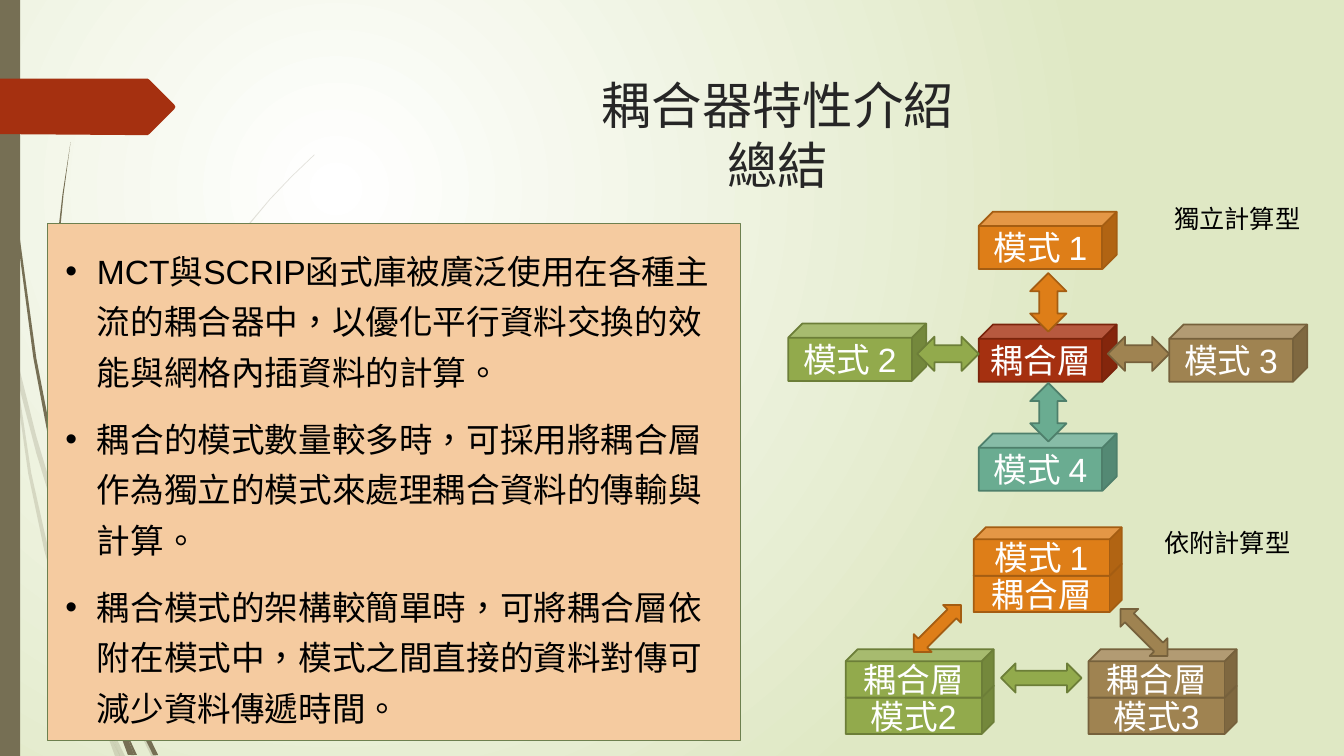
from dataclasses import dataclass

from lxml import etree
from pptx import Presentation
from pptx.dml.color import RGBColor
from pptx.enum import lang, shapes, text
from pptx.oxml.ns import qn
from pptx.util import Pt

WHITE, BLACK, TAUPE, RED = "FFFFFF", "000000", "766F54", "A53010"
OUTLINES = {"DE7E18": "A45D12", "92AA4C": "6C7E38", "9F8351": "76613C",
            "6AAC91": "4E7F6B", RED: "7A240C"}
ORANGE, GREEN, BROWN, TEAL = "DE7E18", "92AA4C", "9F8351", "6AAC91"
COUPLER = "耦合層"


@dataclass
class Cube:
    label: str
    left: float
    top: float
    color: str


@dataclass
class Arrow:
    left: float
    top: float
    width: float
    height: float
    color: str
    rotation: float = 0


@dataclass
class Stack:
    left: float
    top: float
    color: str
    labels: tuple[str, str]


PALE_WISPS = [
    [(7.9, 252), (6.5, 231.8), (0, 203), (0, 215.3), (7.2, 247.7)],
    [(41.8, 375.8), (60.5, 431.3), (61.2, 421.9), (44.6, 374.4), (26, 311.9), (10.1, 248.4),
     (12.2, 270.7), (25.9, 323.6)],
    [(66.2, 437), (63.4, 429.1), (63.4, 439.2), (88.6, 499.7), (108, 540), (111.6, 540),
     (91.4, 498.2)],
    [(85.7, 540), (89.3, 540), (75.6, 511.9)],
    [(67, 491.8), (50.4, 445.7), (34.5, 392.2), (22.3, 337.7), (12.2, 270.7), (7.9, 252),
     (20.2, 338.4), (31.6, 393), (46.8, 447.1), (66.2, 499), (72.7, 514.1), (71.3, 509)],
    [(63.4, 420.5), (68.6, 375.8), (79.2, 332.6), (95.3, 290.9), (115.2, 251.3),
     (138.2, 213.1), (164.9, 176.4), (193, 142.6), (208.8, 126), (224.6, 110.9),
     (224.6, 110.2), (208.1, 126), (193, 141.8), (164.2, 175.7), (137.5, 212),
     (113.8, 250.6), (93.2, 290.2), (77, 331.9), (65.9, 375.7), (61.2, 420.5),
     (61.2, 421.9), (63.4, 429.1)],
    [(72.7, 514.1), (82.1, 540), (85.7, 540)],
    [(69.1, 498.2), (67, 491.8), (71.3, 509), (72.7, 514.1), (85.7, 540), (75.6, 511.9)],
]
DARK_WISPS = [
    [(5, 79.2), (12.2, 167.8), (23.8, 255.6), (40.3, 343.4), (41, 346.3), (39.6, 329),
     (39.6, 326.2), (25.9, 255.6), (13.7, 167), (5.8, 78.5), (3.6, 34.6), (2.9, 0),
     (2.2, 0), (2.9, 34.6)],
    [(81.4, 467.3), (79.2, 461.5), (79.9, 472.3), (95, 509.8), (109.4, 539.3),
     (113, 539.3), (97.9, 508.3)],
    [(43.2, 339.8), (41.8, 326.2), (38.9, 251.3), (41.8, 176.4), (45.4, 139), (50.4, 101.5),
     (44.6, 139), (40.3, 176.4), (37.4, 251.3), (39.6, 323.3)],
    [(95.8, 539.3), (97.9, 539.3), (87.8, 517.7)],
    [(84.2, 519.8), (91.4, 539.3), (94.3, 539.3)],
    [(83.5, 508.3), (79.2, 497.5), (83.5, 516.2), (84.2, 519.8), (93.6, 539.3),
     (95.8, 539.3), (87.8, 517.7)],
]
TAG = [(0, 56.2), (105.5, 56.2), (106.6, 56.9), (124.6, 74.9), (125.3, 76.3),
       (124.6, 77.8), (106.6, 95.8), (105.5, 96.5), (97.9, 96.5), (0, 95.8)]

INDEPENDENT_CUBES = [
    Cube("模式 2", 563, 231.1, GREEN), Cube("模式 4", 699.1, 309.6, TEAL),
    Cube(COUPLER, 699.1, 231.8, RED), Cube("模式 1", 699.1, 151.2, ORANGE),
    Cube("模式 3", 835.2, 231.8, BROWN),
]
INDEPENDENT_ARROWS = [
    Arrow(727.9, 281.5, 41.8, 25.9, TEAL, 90), Arrow(655.2, 240.5, 43.9, 24.5, GREEN),
    Arrow(791.3, 240.5, 43.9, 24.5, BROWN), Arrow(727.9, 203, 41.8, 25.9, ORANGE, 90),
]
ATTACHED_STACKS = [
    Stack(695.5, 376.6, ORANGE, ("模式 1", COUPLER)),
    Stack(604.1, 463.7, GREEN, (COUPLER, "模式2")),
    Stack(777.6, 463.7, BROWN, (COUPLER, "模式3")),
]
ATTACHED_ARROWS = [
    Arrow(645.8, 439.9, 47.5, 18, ORANGE, 135), Arrow(715, 473.8, 57.6, 20.9, GREEN),
    Arrow(793.4, 442.8, 47.5, 18, BROWN, 45),
]
SUMMARY = [
    "MCT與SCRIP函式庫被廣泛使用在各種主流的耦合器中，以優化平行資料交換的效能與網格內插資料的計算。",
    "耦合的模式數量較多時，可採用將耦合層作為獨立的模式來處理耦合資料的傳輸與計算。",
    "耦合模式的架構較簡單時，可將耦合層依附在模式中，模式之間直接的資料對傳可減少資料傳遞時間。",
]


def rgb(color: str) -> RGBColor:
    return RGBColor.from_string(color)


def write(paragraph, words: str, *, size: float = 24, color: str = BLACK,
          font: str = "Arial", align=None) -> None:
    run = paragraph.add_run()
    run.text = words
    run.font.size, run.font.name = Pt(size), font
    run.font.color.rgb = rgb(color)
    run.font.language_id = lang.MSO_LANGUAGE_ID.TRADITIONAL_CHINESE
    if align is not None:
        paragraph.alignment = align


def paint(shape, color: str, outline: str | None = None, weight: float = 1.25) -> None:
    shape.shadow.inherit = False
    shape.fill.solid()
    shape.fill.fore_color.rgb = rgb(color)
    if outline:
        shape.line.color.rgb = rgb(outline)
        shape.line.width = Pt(weight)
    else:
        shape.line.fill.background()


def draw_preset(slide, kind, left: float, top: float, width: float, height: float,
                color: str, outline: str | None = None, weight: float = 1.25):
    preset = slide.shapes.add_shape(kind, Pt(left), Pt(top), Pt(width), Pt(height))
    paint(preset, color, outline, weight)
    return preset


def draw_outline(slide, points: list, color: str, opacity: int = 100) -> None:
    corners = [(Pt(x), Pt(y)) for x, y in points]
    builder = slide.shapes.build_freeform(*corners[0])
    builder.add_line_segments(corners[1:], close=True)
    outline = builder.convert_to_shape()
    paint(outline, color)
    if opacity < 100:
        tint = outline.element.spPr.find(".//" + qn("a:srgbClr"))
        etree.SubElement(tint, qn("a:alpha"), val=str(opacity * 1000))


def draw_cube(slide, cube: Cube, width: float = 98.6, height: float = 41) -> None:
    block = draw_preset(slide, shapes.MSO_SHAPE.CUBE, cube.left, cube.top, width, height,
                        cube.color, OUTLINES[cube.color])
    frame = block.text_frame
    frame.word_wrap = False
    frame.vertical_anchor = text.MSO_ANCHOR.MIDDLE
    write(frame.paragraphs[0], cube.label, color=WHITE, align=text.PP_ALIGN.CENTER)


def draw_arrow(slide, arrow: Arrow) -> None:
    exchange = draw_preset(slide, shapes.MSO_SHAPE.LEFT_RIGHT_ARROW, arrow.left, arrow.top,
                           arrow.width, arrow.height, arrow.color, OUTLINES[arrow.color])
    exchange.rotation = arrow.rotation


def add_frame(slide, left: float, top: float, width: float, height: float):
    frame = slide.shapes.add_textbox(Pt(left), Pt(top), Pt(width), Pt(height)).text_frame
    frame.word_wrap = True
    frame.auto_size = text.MSO_AUTO_SIZE.SHAPE_TO_FIT_TEXT
    return frame


def set_background(slide) -> None:
    fill = slide.background.fill
    fill.gradient()
    for stop, color in zip(fill.gradient_stops, (WHITE, "DFE8C4")):
        stop.color.rgb = rgb(color)
    linear = slide.element.find(".//" + qn("a:lin"))
    radial = etree.Element(qn("a:path"), path="circle")
    etree.SubElement(radial, qn("a:fillToRect"), l="50000", t="50000", r="100000", b="100000")
    linear.getparent().replace(linear, radial)


def set_title(slide) -> None:
    title = slide.shapes.title
    title.left, title.top, title.width, title.height = Pt(204.5), Pt(49), Pt(702), Pt(100.8)
    title.text_frame.vertical_anchor = text.MSO_ANCHOR.TOP
    heading = title.text_frame.paragraphs[0]
    write(heading, "耦合器特性介紹", size=36, color="262626", font="League Spartan",
          align=text.PP_ALIGN.CENTER)
    heading.add_line_break()
    write(heading, "總結", size=36, color="262626")


def draw_summary(slide) -> None:
    draw_preset(slide, shapes.MSO_SHAPE.FLOWCHART_PROCESS, 33.8, 159.8, 495.4, 369.4,
                "F5CBA0", "6D804F", 0.75)
    frame = add_frame(slide, 39.6, 168.5, 478.8, 358.6)
    for index, point in enumerate(SUMMARY):
        paragraph = frame.add_paragraph() if index else frame.paragraphs[0]
        paragraph.line_spacing, paragraph.space_before = 1.25, Pt(12)
        write(paragraph, point)
        properties = paragraph._p.get_or_add_pPr()
        properties.set("marL", str(Pt(22.5)))
        properties.set("indent", str(Pt(-22.5)))
        etree.SubElement(properties, qn("a:buFont"), typeface="Arial")
        etree.SubElement(properties, qn("a:buChar"), char="•")


def main() -> None:
    deck = Presentation()
    deck.slide_width, deck.slide_height = Pt(960), Pt(540)
    slide = deck.slides.add_slide(deck.slide_layouts[5])
    set_background(slide)
    for wisp in PALE_WISPS:
        draw_outline(slide, wisp, TAUPE, opacity=20)
    for wisp in DARK_WISPS:
        draw_outline(slide, wisp, TAUPE)
    draw_preset(slide, shapes.MSO_SHAPE.RECTANGLE, 0, 0, 14.4, 540, TAUPE)
    draw_outline(slide, TAG, RED)
    set_title(slide)
    for cube in INDEPENDENT_CUBES:
        draw_cube(slide, cube)
    for stack in ATTACHED_STACKS:
        for level in (1, 0):
            draw_cube(slide, Cube(stack.labels[level], stack.left, stack.top + 26 * level,
                                  stack.color), 105.8, 34.6)
    for arrow in INDEPENDENT_ARROWS + ATTACHED_ARROWS:
        draw_arrow(slide, arrow)
    for caption, left, top in (("獨立計算型", 808.6, 141.8), ("依附計算型", 801.4, 373)):
        write(add_frame(slide, left, top, 150.5, 28.8).paragraphs[0], caption, size=18,
              align=text.PP_ALIGN.CENTER)
    draw_summary(slide)
    deck.save("out.pptx")


if __name__ == "__main__":
    main()
